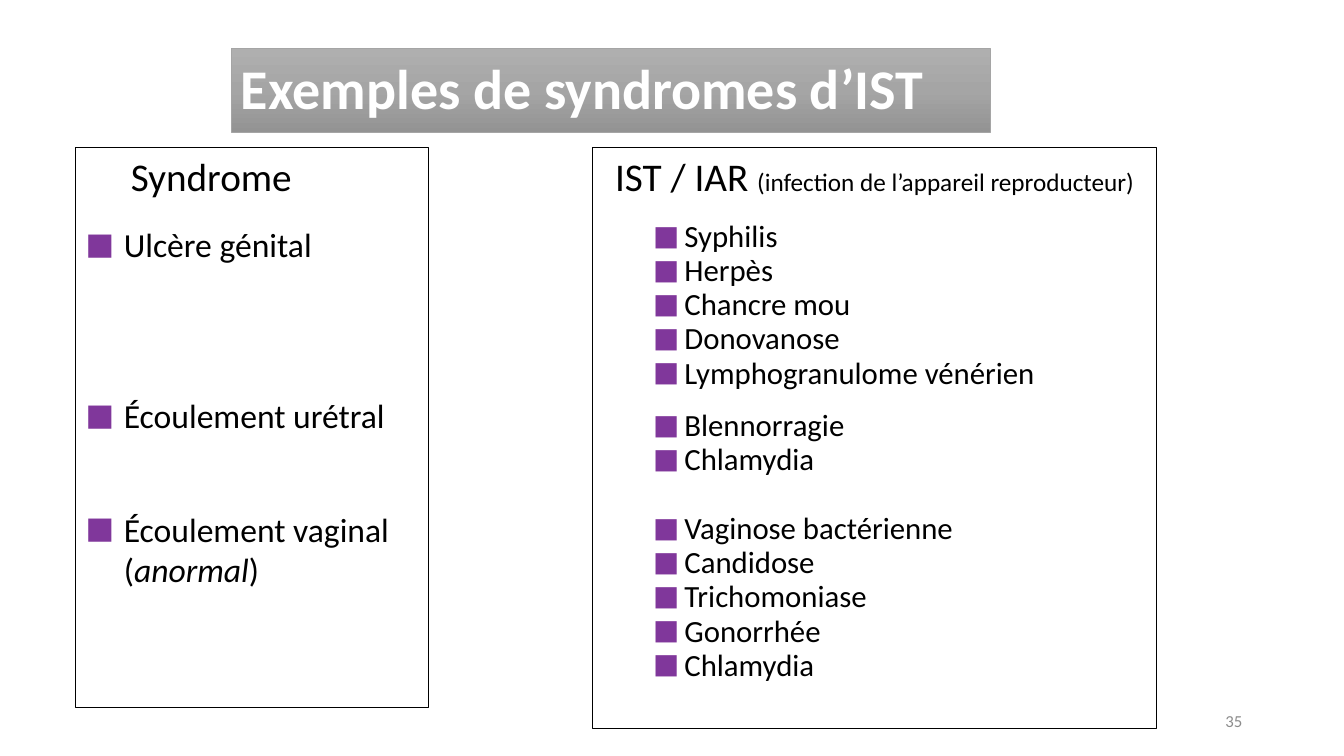
from copy import deepcopy

from lxml import etree
from pptx import Presentation
from pptx.dml.color import RGBColor
from pptx.enum.shapes import MSO_SHAPE
from pptx.enum.text import MSO_ANCHOR, MSO_AUTO_SIZE, PP_ALIGN
from pptx.oxml.ns import qn
from pptx.util import Inches, Pt

RECTANGLE = MSO_SHAPE.RECTANGLE
TOP, MIDDLE = MSO_ANCHOR.TOP, MSO_ANCHOR.MIDDLE
LEFT, CENTER, RIGHT = PP_ALIGN.LEFT, PP_ALIGN.CENTER, PP_ALIGN.RIGHT
FIT_SHAPE = MSO_AUTO_SIZE.SHAPE_TO_FIT_TEXT

COLORS = {
    "text": "000000",
    "white": "FFFFFF",
    "bullet": "80379B",
    "number": "8C8C8C",
    "band_top": "AFAFAF",
    "band_middle": "A5A5A5",
    "band_bottom": "939393",
}

SYNDROMES = [
    ([("Ulcère génital", False)], 17.6),
    ([("Écoulement urétral", False)], 93.6),
    ([("Écoulement vaginal (", False), ("anormal", True), (")", False)], 52.1),
]
INFECTION_GROUPS = [
    (["Syphilis", "Herpès", "Chancre mou", "Donovanose", "Lymphogranulome vénérien"], 15.5, 0.9),
    (["Blennorragie"], 11, 1),
    (["Chlamydia"], 0.65, 0.9),
    (["Vaginose bactérienne", "Candidose", "Trichomoniase", "Gonorrhée", "Chlamydia"], 25.5, 0.9),
]
LINE_GAP = 0.65


class SlideBuilder:
    font = "Calibri"

    def __init__(self, page):
        self.page = page

    def color(self, name):
        return RGBColor.from_string(COLORS[name])

    def span(self, para, text, size, color="text", bold=False, italic=False):
        span = para.add_run()
        span.text = text
        font = span.font
        font.name, font.size = self.font, Pt(size)
        font.bold, font.italic = bold, italic
        font.color.rgb = self.color(color)

    def title(self, text, left, top, width, height):
        title = self.page.shapes.title
        title.left, title.top = Inches(left), Inches(top)
        title.width, title.height = Inches(width), Inches(height)
        title.fill.gradient()
        title.fill.gradient_angle = 270
        stops = title.fill.gradient_stops
        for stop, position, name in zip(stops, (0, 1), ("band_top", "band_bottom")):
            stop.position = position
            stop.color.rgb = self.color(name)
        first = title._element.spPr.find(".//" + qn("a:gs"))
        middle = deepcopy(first)
        middle.set("pos", "50000")
        middle[0].set("val", COLORS["band_middle"])
        first.addnext(middle)
        title.line.color.rgb = self.color("band_middle")
        title.line.width = Pt(0.5)
        frame = title.text_frame
        frame.auto_size = FIT_SHAPE
        frame.vertical_anchor = TOP
        para = frame.paragraphs[0]
        para.alignment = LEFT
        self.span(para, text, 40, "white", bold=True)

    def panel(self, left, top, width, height):
        box = self.page.shapes.add_shape(
            RECTANGLE, Inches(left), Inches(top), Inches(width), Inches(height))
        box.shadow.inherit = False
        box.fill.background()
        box.line.color.rgb = self.color("text")
        box.line.width = Pt(0.75)
        frame = box.text_frame
        frame.word_wrap = True
        frame.vertical_anchor = TOP
        return frame

    def heading(self, frame, spans, alignment=LEFT, margin=0):
        para = frame.paragraphs[0]
        para._p.get_or_add_pPr().set("marL", str(Inches(margin)))
        para.alignment = alignment
        for text, size in spans:
            self.span(para, text, size)

    def bullet(self, frame, spans, size, margin, hanging, before, spacing=1):
        para = frame.add_paragraph()
        properties = para._p.get_or_add_pPr()
        properties.set("marL", str(Inches(margin)))
        properties.set("indent", str(-Inches(hanging)))
        mark_color = etree.SubElement(properties, qn("a:buClr"))
        etree.SubElement(mark_color, qn("a:srgbClr"), val=COLORS["bullet"])
        etree.SubElement(properties, qn("a:buSzPct"), val="90000")
        etree.SubElement(properties, qn("a:buFont"), typeface=self.font)
        etree.SubElement(properties, qn("a:buChar"), char="■")
        para.alignment = LEFT
        para.line_spacing = float(spacing)
        para.space_before = Pt(before)
        for text, italic in spans:
            self.span(para, text, size, italic=italic)

    def page_number(self, text, left, top, width, height):
        box = self.page.shapes.add_textbox(
            Inches(left), Inches(top), Inches(width), Inches(height))
        frame = box.text_frame
        frame.word_wrap = True
        frame.vertical_anchor = MIDDLE
        para = frame.paragraphs[0]
        para.alignment = RIGHT
        self.span(para, text, 12, "number")


def main():
    deck = Presentation()
    deck.slide_width, deck.slide_height = Inches(13.33), Inches(7.5)
    builder = SlideBuilder(deck.slides.add_slide(deck.slide_layouts[5]))

    builder.title("Exemples de syndromes d’IST", 2.29, 0.48, 7.53, 0.77)

    syndromes = builder.panel(0.75, 1.46, 3.5, 5.56)
    builder.heading(syndromes, [("Syndrome", 28)], margin=0.45)
    for spans, before in SYNDROMES:
        builder.bullet(syndromes, spans, 24, 0.38, 0.38, before)

    infections = builder.panel(5.88, 1.46, 5.59, 5.77)
    builder.heading(
        infections,
        [("IST / IAR ", 28), ("(infection de l’appareil reproducteur)", 18)],
        CENTER)
    for names, before, spacing in INFECTION_GROUPS:
        for index, name in enumerate(names):
            gap = LINE_GAP if index else before
            builder.bullet(infections, [(name, False)], 22, 0.81, 0.31, gap, spacing)

    builder.page_number("35", 9.42, 6.95, 3, 0.4)
    deck.save("out.pptx")


if __name__ == "__main__":
    main()
